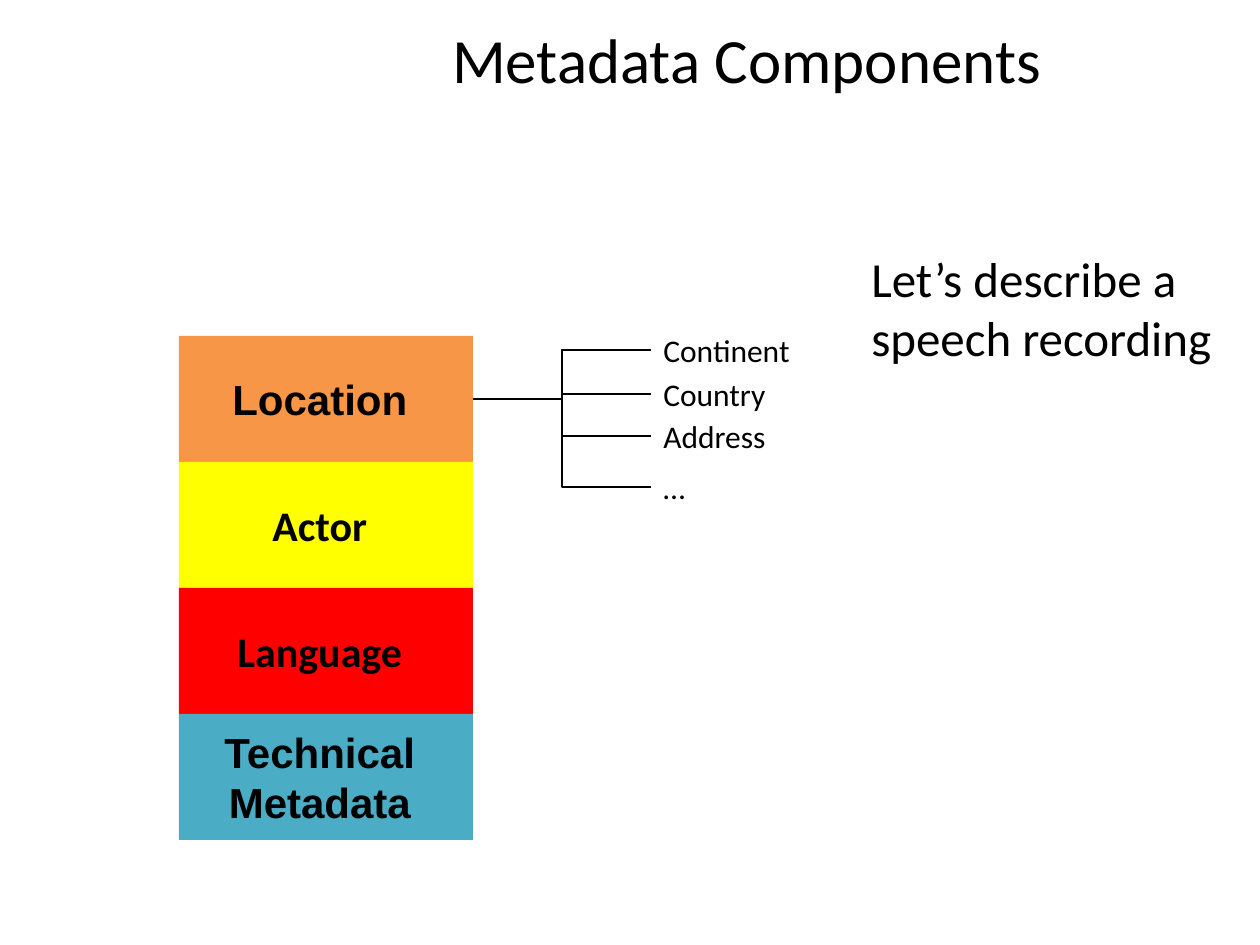
from lxml.etree import SubElement
from pptx import Presentation
from pptx.dml.color import RGBColor
from pptx.enum.shapes import MSO_CONNECTOR, MSO_SHAPE
from pptx.enum.text import MSO_ANCHOR, MSO_AUTO_SIZE, PP_ALIGN
from pptx.oxml.ns import qn
from pptx.util import Inches, Pt

PX = Inches(1) // 126


def color(hex_string):
    return RGBColor.from_string(hex_string)


def write(shape, lines, size, font="Calibri", bold=False, align=PP_ALIGN.LEFT):
    """Fill a shape with one paragraph per line."""
    frame = shape.text_frame
    for index, line in enumerate(lines):
        paragraph = frame.paragraphs[0] if index == 0 else frame.add_paragraph()
        paragraph.alignment = align
        run = paragraph.add_run()
        run.text = line
        run.font.name = font
        run.font.size = Pt(size)
        run.font.bold = bold
        run.font.color.rgb = color("000000")


prs = Presentation()
prs.slide_width = 1260 * PX
prs.slide_height = 945 * PX
shapes = prs.slides.add_slide(prs.slide_layouts[6]).shapes

title = shapes.add_textbox(233 * PX, 0, 1027 * PX, 116 * PX)
title.text_frame.word_wrap = True
title.text_frame.vertical_anchor = MSO_ANCHOR.MIDDLE
write(title, ["Metadata Components"], 36, align=PP_ALIGN.CENTER)

# Stack of metadata components
components = [
    (["Location"], "F79646", "Arial"),
    (["Actor"], "FFFF00", "Calibri"),
    (["Language"], "FF0000", "Calibri"),
    (["Technical", "Metadata"], "4BACC6", "Arial"),
]
blocks = []
for row, (lines, fill, font) in enumerate(components):
    block = shapes.add_shape(MSO_SHAPE.RECTANGLE, 179 * PX, (336 + 126 * row) * PX,
                             294 * PX, 126 * PX)
    block.shadow.inherit = False
    block.fill.solid()
    block.fill.fore_color.rgb = color(fill)
    block.line.fill.background()
    block.text_frame.margin_left = 0
    block.text_frame.word_wrap = True
    block.text_frame.vertical_anchor = MSO_ANCHOR.MIDDLE
    write(block, lines, 24, font, True, PP_ALIGN.CENTER)
    blocks.append(block)
location = blocks[0]

# Fields of the location, each joined to its block
fields = [("Continent", 325, 161), ("Country", 369, 137),
          ("Address", 411, 144), ("…", 462, 57)]
for name, top, width in fields:
    field = shapes.add_textbox(651 * PX, top * PX, width * PX, 50 * PX)
    field.text_frame.word_wrap = False
    field.text_frame.auto_size = MSO_AUTO_SIZE.SHAPE_TO_FIT_TEXT
    write(field, [name], 18)

    branch = shapes.add_connector(MSO_CONNECTOR.ELBOW, 473 * PX, 399 * PX,
                                  651 * PX, (top + 25) * PX)
    branch.begin_connect(location, 3)
    branch.end_connect(field, 1)
    branch.line.color.rgb = color("000000")
    branch.line.width = Pt(0.75)
    SubElement(branch._element.spPr, qn("a:effectLst"))

task = shapes.add_textbox(859 * PX, 242 * PX, 404 * PX, 131 * PX)
task.text_frame.word_wrap = False
task.text_frame.auto_size = MSO_AUTO_SIZE.SHAPE_TO_FIT_TEXT
write(task, ["Let’s describe a", "speech recording"], 28)

prs.save("out.pptx")
